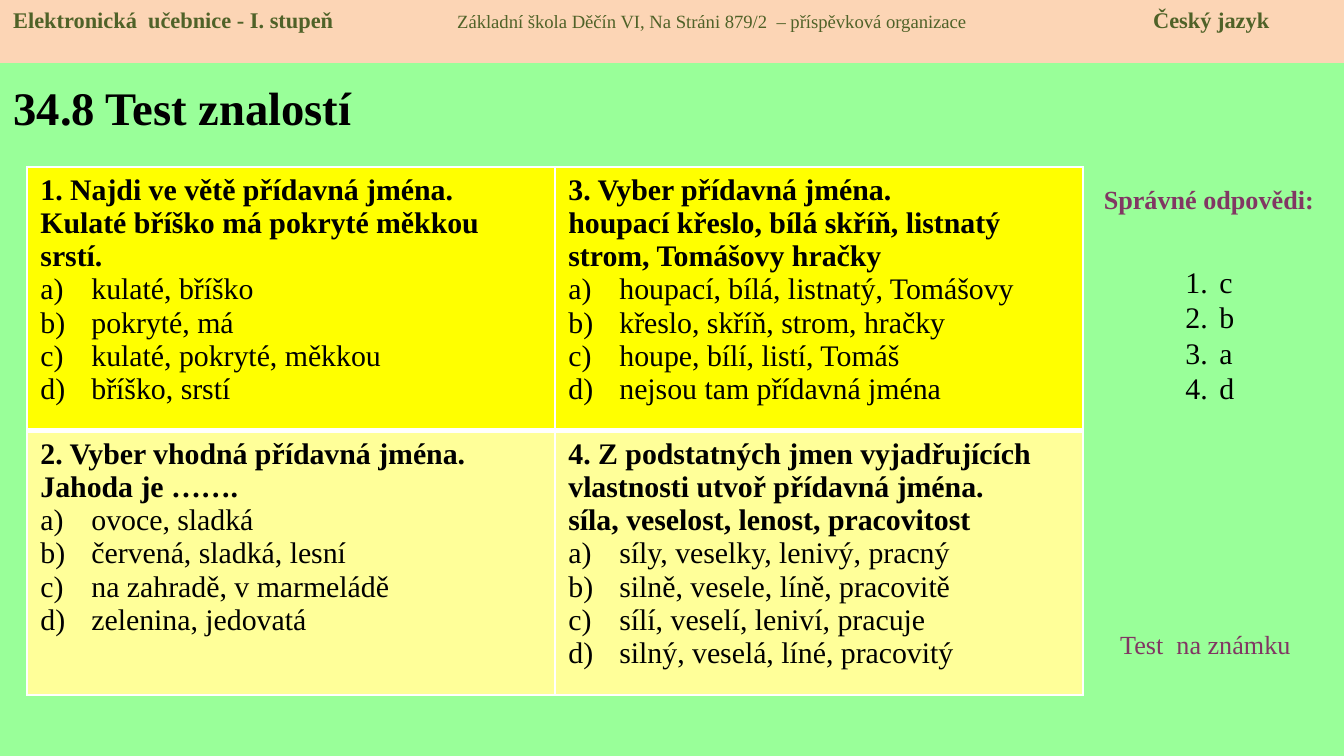
from dataclasses import dataclass
from typing import Any, NamedTuple

import lxml.etree
import pptx
import pptx.dml.color
import pptx.enum.shapes
import pptx.enum.text
import pptx.oxml.ns
import pptx.util

ALIGN = pptx.enum.text.PP_ALIGN
ANCHOR = pptx.enum.text.MSO_ANCHOR


@dataclass(frozen=True)
class Theme:
    font: str = "Times New Roman"
    background: str = "99FF99"
    band: str = "FCD5B5"
    band_text: str = "4F6228"
    accent: str = "813763"
    ink: str = "000000"
    line: str = "FFFFFF"
    rows: tuple[str, ...] = ("FFFF00", "FFFF99")
    title: int = 25
    body: int = 16
    label: int = 14
    heading: int = 12
    school: int = 10


class Box(NamedTuple):
    x: int
    y: int
    w: int
    h: int


class Question(NamedTuple):
    prompts: list[str]
    options: list[str]


class Label(NamedTuple):
    text: str
    box: Box
    bold: bool
    align: Any


THEME = Theme()

QUESTIONS = [
    [
        Question(["1. Najdi ve větě přídavná jména.", "Kulaté bříško má pokryté měkkou srstí."],
                 ["kulaté, bříško", "pokryté, má", "kulaté, pokryté, měkkou", "bříško, srstí"]),
        Question(["3. Vyber přídavná jména.", "houpací křeslo, bílá skříň, listnatý",
                  "strom, Tomášovy hračky"],
                 ["houpací, bílá, listnatý, Tomášovy", "křeslo, skříň, strom, hračky",
                  "houpe, bílí, listí, Tomáš", "nejsou tam přídavná jména"]),
    ],
    [
        Question(["2. Vyber vhodná přídavná jména.", "Jahoda je ……."],
                 ["ovoce, sladká", "červená, sladká, lesní", "na zahradě, v marmeládě",
                  "zelenina, jedovatá"]),
        Question(["4. Z podstatných jmen vyjadřujících vlastnosti utvoř přídavná jména.",
                  "síla, veselost, lenost, pracovitost"],
                 ["síly, veselky, lenivý, pracný", "silně, vesele, líně, pracovitě",
                  "sílí, veselí, leniví, pracuje", "silný, veselá, líné, pracovitý"]),
    ],
]

LABELS = [
    Label("Správné odpovědi:", Box(1082, 177, 254, 46), True, ALIGN.CENTER),
    Label("Test  na známku", Box(1107, 622, 211, 46), False, ALIGN.LEFT),
]


def px(n: int) -> int:
    return pptx.util.Emu(round(n * 914400 / 134.4))


def rgb(color: str) -> Any:
    return pptx.dml.color.RGBColor.from_string(color)


def sub(parent: Any, tag: str, **attrs: Any) -> Any:
    return lxml.etree.SubElement(parent, pptx.oxml.ns.qn(tag),
                                 {k: str(v) for k, v in attrs.items()})


def style(font: Any, size: int, color: str, bold: bool = False) -> None:
    font.name, font.size, font.bold = THEME.font, pptx.util.Pt(size), bold
    font.color.rgb = rgb(color)


def place(sp: Any, box: Box) -> None:
    sp.left, sp.top, sp.width, sp.height = map(px, box)


def fill_lines(tf: Any, lines: list[str]) -> list[Any]:
    tf.text = "\n".join(lines)
    return list(tf.paragraphs)


def number(p: Any, scheme: str, indent: int) -> None:
    pPr = p._p.get_or_add_pPr()
    pPr.set("marL", str(px(indent)))
    pPr.set("indent", str(-px(indent)))
    sub(pPr, "a:buFont", typeface="+mj-lt")
    sub(pPr, "a:buAutoNum", type=scheme)


def border(cell: Any, side: str, points: int) -> None:
    ln = sub(cell._tc.get_or_add_tcPr(), f"a:ln{side}", w=pptx.util.Pt(points))
    sub(sub(ln, "a:solidFill"), "a:srgbClr", val=THEME.line)


def draw_header(s: Any, box: Box) -> None:
    sp = s.shapes.add_shape(pptx.enum.shapes.MSO_SHAPE.RECTANGLE, *map(px, box))
    sp.shadow.inherit = False
    sp.fill.solid()
    sp.fill.fore_color.rgb = rgb(THEME.band)
    sp.line.fill.background()
    tf = sp.text_frame
    tf.vertical_anchor = ANCHOR.TOP
    p = tf.paragraphs[0]
    p.alignment = ALIGN.LEFT
    tabs = sub(p._p.get_or_add_pPr(), "a:tabLst")
    for stop in (444, 1140):
        sub(tabs, "a:tab", pos=px(stop), algn="l")
    for text, size, bold in (
        ("Elektronická  učebnice - I. stupeň\t", THEME.heading, True),
        ("Základní škola Děčín VI, Na Stráni 879/2  – příspěvková organizace\t",
         THEME.school, False),
        ("Český jazyk", THEME.heading, True),
    ):
        r = p.add_run()
        r.text = text
        style(r.font, size, THEME.band_text, bold)


def draw_title(sp: Any, text: str, box: Box) -> None:
    place(sp, box)
    tf = sp.text_frame
    tf.vertical_anchor = ANCHOR.MIDDLE
    p = fill_lines(tf, [text])[0]
    p.alignment = ALIGN.LEFT
    style(p.font, THEME.title, THEME.ink, True)


def draw_questions(s: Any, box: Box) -> None:
    table = s.shapes.add_table(2, 2, *map(px, box)).table
    for i, row in enumerate(QUESTIONS):
        for j, question in enumerate(row):
            cell = table.cell(i, j)
            # The thicker rule separates the two rows
            for side, points in zip("LRTB", (1, 1, 3 if i else 1, 1 if i else 3)):
                border(cell, side, points)
            cell.fill.solid()
            cell.fill.fore_color.rgb = rgb(THEME.rows[i])
            lines = fill_lines(cell.text_frame, question.prompts + question.options)
            for k, p in enumerate(lines):
                is_prompt = k < len(question.prompts)
                style(p.font, THEME.body, THEME.ink, is_prompt)
                if not is_prompt:
                    number(p, "alphaLcParenR", 51)


def draw_answers(sp: Any, answers: list[str], box: Box) -> None:
    place(sp, box)
    tf = sp.text_frame
    tf.auto_size = pptx.enum.text.MSO_AUTO_SIZE.NONE
    tf.margin_top = px(42)
    for p in fill_lines(tf, answers):
        p.space_before = pptx.util.Pt(0)
        p.line_spacing = pptx.util.Pt(19)
        style(p.font, THEME.body, THEME.ink)
        number(p, "arabicPeriod", 34)


def draw_label(s: Any, label: Label) -> None:
    tf = s.shapes.add_textbox(*map(px, label.box)).text_frame
    tf.word_wrap = True
    p = fill_lines(tf, [label.text])[0]
    p.alignment = label.align
    style(p.font, THEME.label, THEME.accent, label.bold)


def main() -> None:
    prs = pptx.Presentation()
    prs.slide_width, prs.slide_height = px(1344), px(756)
    s = prs.slides.add_slide(prs.slide_layouts[1])
    s.background.fill.solid()
    s.background.fill.fore_color.rgb = rgb(THEME.background)

    # Title and header band
    draw_title(s.shapes.title, "34.8 Test znalostí", Box(0, 63, 429, 87))
    draw_header(s, Box(0, 0, 1344, 63))

    # Test questions
    draw_questions(s, Box(27, 167, 1056, 528))

    # Answer key and side labels
    draw_answers(s.placeholders[1], ["c", "b", "a", "d"], Box(1172, 222, 74, 267))
    for label in LABELS:
        draw_label(s, label)

    prs.save("out.pptx")


if __name__ == "__main__":
    main()
